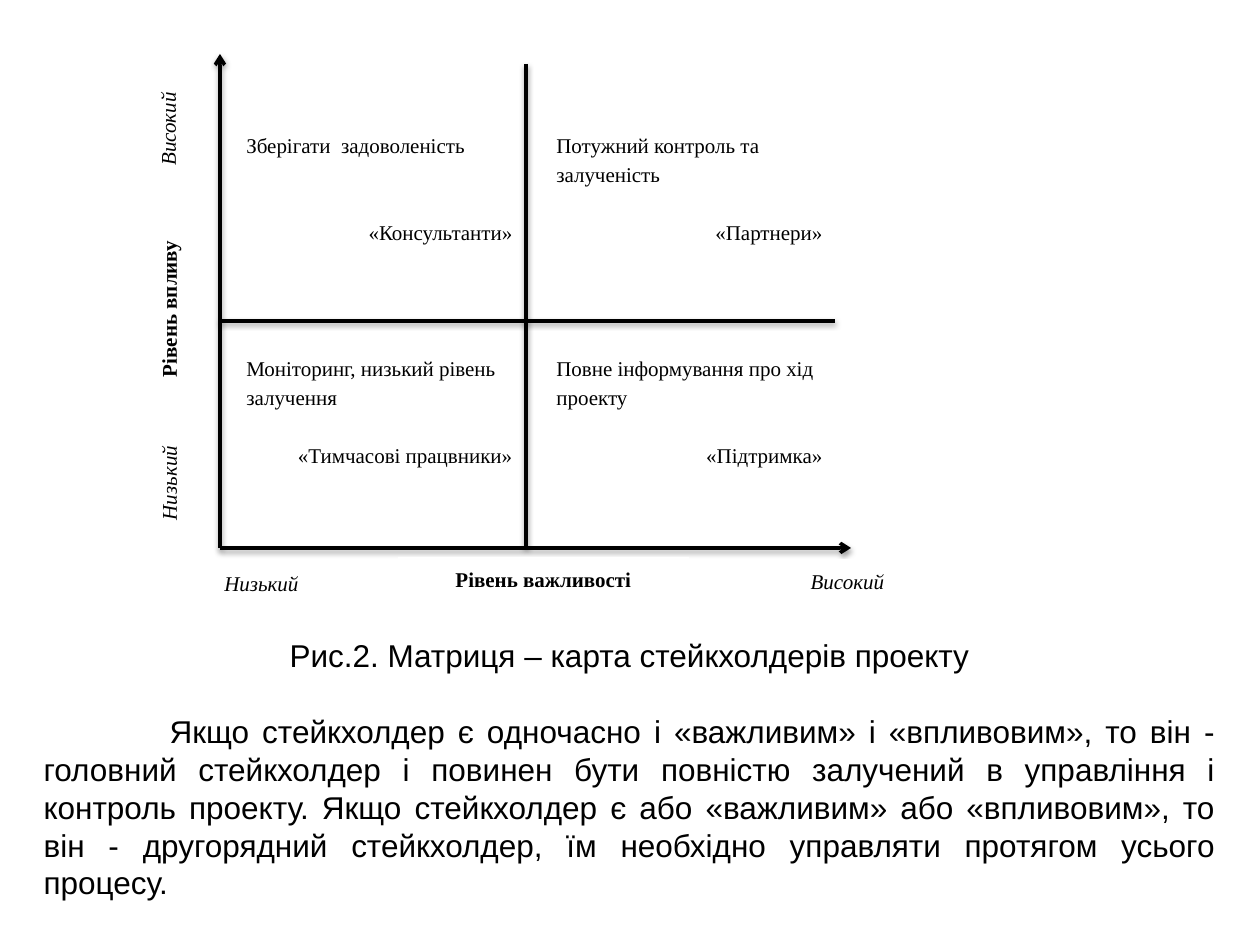
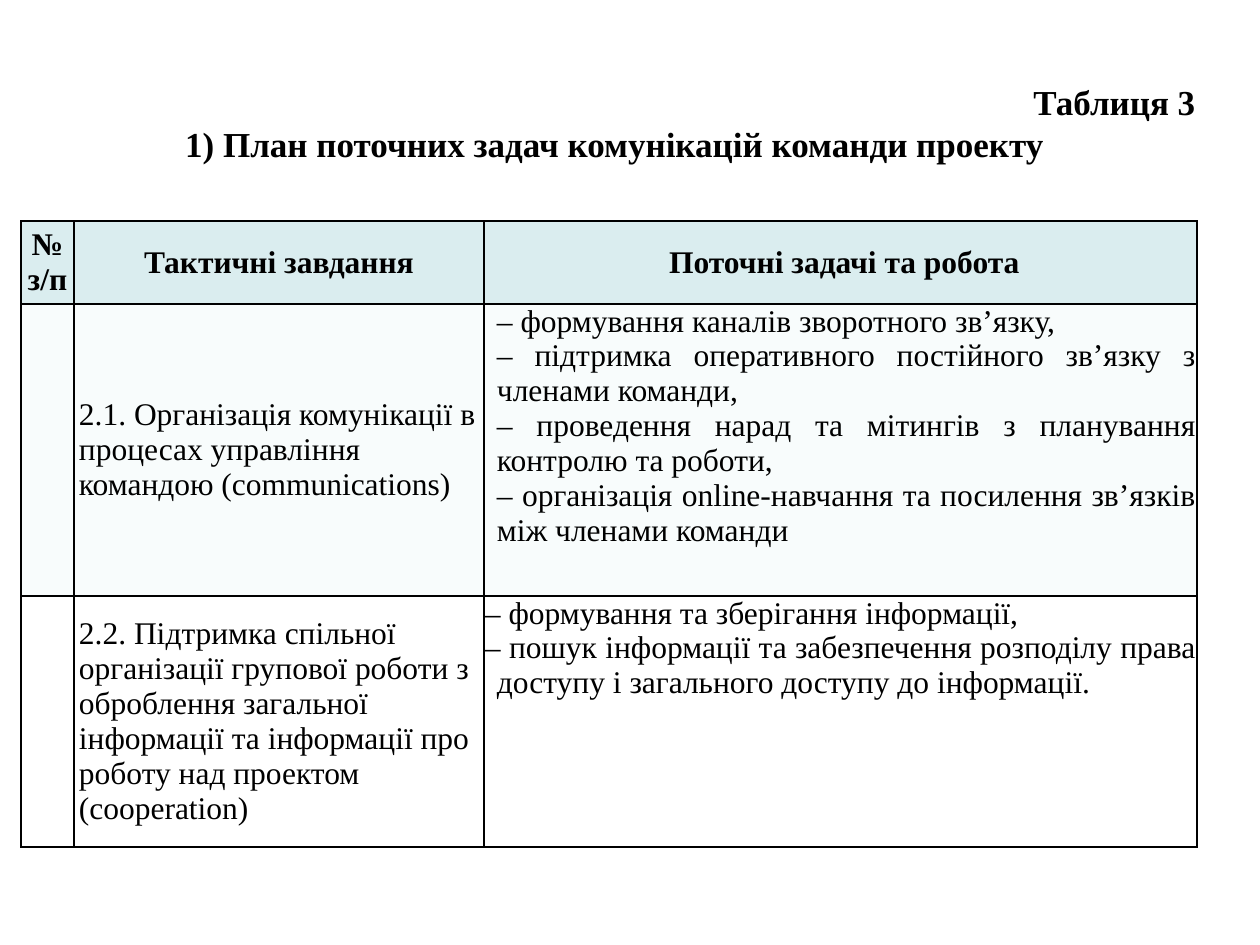
from lxml import etree
from pptx import Presentation
from pptx import util as u
from pptx.dml.color import RGBColor
from pptx.enum import shapes, text
from pptx.oxml import ns

INK, PAPER, HEAD, TINT = "000000", "FFFFFF", "DAEDEF", "F8FCFC"
SANS, SERIF = "Arial", "Times New Roman"
LEFT, CENTER, RIGHT, JUSTIFY = (
    text.PP_ALIGN.LEFT, text.PP_ALIGN.CENTER, text.PP_ALIGN.RIGHT, text.PP_ALIGN.JUSTIFY)
TOP, MIDDLE = text.MSO_ANCHOR.TOP, text.MSO_ANCHOR.MIDDLE

QUADRANTS = [
    ("Зберігати  задоволеність", "«Консультанти»", 2),
    ("Потужний контроль та залученість", "«Партнери»", 1),
    ("Моніторинг, низький рівень залучення", "«Тимчасові працвники»", 1),
    ("Повне інформування про хід проекту", "«Підтримка»", 1),
]
CAPTION = "Рис.2. Матриця – карта стейкхолдерів проекту"
CONCLUSION = (
    "Якщо стейкхолдер є одночасно і «важливим» і «впливовим», то він - головний "
    "стейкхолдер і повинен бути повністю залучений в управління і контроль проекту. "
    "Якщо стейкхолдер є або «важливим» або «впливовим», то він - другорядний "
    "стейкхолдер, їм необхідно управляти протягом усього процесу.")
HEADERS = ["№ з/п", "Тактичні завдання", "Поточні задачі та робота"]
TASKS = [
    ("2.1. Організація комунікації в процесах управління командою (communications)",
     ["– формування каналів зворотного зв’язку,",
      "– підтримка оперативного постійного зв’язку з членами команди,",
      "– проведення нарад та мітингів з планування контролю та роботи,",
      "– організація online-навчання та посилення зв’язків між членами команди"],
     TINT, 0),
    ("2.2. Підтримка спільної організації групової роботи з оброблення загальної "
     "інформації та інформації про роботу над проектом (cooperation)",
     ["– формування та зберігання інформації,",
      "– пошук інформації та забезпечення розподілу права доступу і загального "
      "доступу до інформації."],
     PAPER, -12),
]


def px(n):
    """Turn px into EMU."""
    return u.Emu(round(n * 914400 / 126))


def rgb(hex_color):
    """Turn a hex string into a colour."""
    return RGBColor.from_string(hex_color)


def paint(item, hex_color):
    """Give a shape or cell a solid fill."""
    item.fill.solid()
    item.fill.fore_color.rgb = rgb(hex_color)


def sub(parent, tag, **attrs):
    """Append a drawing element with attributes."""
    el = etree.SubElement(parent, ns.qn(tag))
    for name, value in attrs.items():
        el.set(name, str(value))
    return el


def write(tf, index, words, size, font, align=LEFT, bold=False, italic=False,
          spacing=1.0, before=0, margin=0, indent=0):
    """Write one formatted paragraph, adding it if it is not the first."""
    p = tf.add_paragraph() if index else tf.paragraphs[0]
    p.alignment, p.line_spacing = align, spacing
    p.space_before, p.space_after = u.Pt(before), u.Pt(0)
    pPr = p._p.get_or_add_pPr()
    pPr.set("marL", str(px(margin)))
    pPr.set("indent", str(px(indent)))
    sub(pPr, "a:buNone")
    r = p.add_run()
    r.text = words
    f = r.font
    f.name, f.size, f.bold, f.italic = font, u.Pt(size), bold, italic
    f.color.rgb = rgb(INK)


def placed(sp, x, y, w, h):
    """Move a placeholder and return its prepared text frame."""
    sp.left, sp.top, sp.width, sp.height = map(px, (x, y, w, h))
    tf = sp.text_frame
    tf.word_wrap, tf.auto_size = True, text.MSO_AUTO_SIZE.NONE
    tf.vertical_anchor = TOP
    return tf


def panel(s, x, y, w, h, vertical=False):
    """Add a white rectangle and return its text frame."""
    sp = s.shapes.add_shape(shapes.MSO_SHAPE.RECTANGLE, *map(px, (x, y, w, h)))
    sp.shadow.inherit = False
    paint(sp, PAPER)
    sp.line.fill.background()
    tf = sp.text_frame
    tf.word_wrap, tf.vertical_anchor = True, TOP
    if vertical:
        tf._txBody.bodyPr.set("vert", "vert270")
    return tf


def rule(s, x1, y1, x2, y2, arrow=False):
    """Draw a shadowed line, with an arrowhead for an axis."""
    cx = s.shapes.add_connector(shapes.MSO_CONNECTOR.STRAIGHT, *map(px, (x1, y1, x2, y2)))
    cx.line.color.rgb, cx.line.width = rgb(INK), u.Pt(2)
    if arrow:
        sub(cx.line._get_or_add_ln(), "a:tailEnd", type="arrow")
    shadow = sub(sub(cx._element.spPr, "a:effectLst"), "a:outerShdw",
                 blurRad=u.Pt(3.1), dist=u.Pt(1.6), dir=5400000, rotWithShape=0)
    sub(sub(shadow, "a:srgbClr", val=INK), "a:alpha", val=38000)


def matrix(s, x, y, w, h):
    """Draw the influence and importance matrix in the given box."""
    mid_x, mid_y, bottom = x + 306, y + 267, y + h
    for i, (action, role, gap) in enumerate(QUADRANTS):
        row, col = divmod(i, 2)
        tf = panel(s, x + 14 + 310 * col, y + 69 + 223 * row, 291, 179)
        write(tf, 0, action, 12, SERIF, spacing=1.15)
        write(tf, 1, role, 12, SERIF, RIGHT, spacing=1.15, before=16.6 * gap)
    rule(s, x, bottom, x + w, bottom, arrow=True)
    rule(s, x, bottom, x, y, arrow=True)
    rule(s, x, mid_y, x + w - 16, mid_y)
    rule(s, mid_x, y + 10, mid_x, bottom)
    labels = [
        ("Рівень важливості", 178, 503, 291, 49, False),
        ("Низький", -104, 507, 291, 49, False),
        ("Високий", 482, 505, 291, 49, False),
        ("Низький", -74, 350, 66, 158, True),
        ("Рівень впливу", -74, 151, 66, 208, True),
        ("Високий", -75, -4, 66, 158, True),
    ]
    for words, dx, dy, lw, lh, vertical in labels:
        axis = words.startswith("Рівень")
        write(panel(s, x + dx, y + dy, lw, lh, vertical), 0, words, 12, SERIF, CENTER,
              bold=axis, italic=not axis, spacing=1.15)


def matrix_slide(prs):
    """Build the slide with the stakeholder matrix and its conclusion."""
    s = prs.slides.add_slide(prs.slide_layouts[1])
    write(placed(s.shapes.title, 31, 630, 1197, 50), 0, CAPTION, 18, SANS, CENTER)
    body = placed(s.placeholders[1], 31, 706, 1197, 204)
    write(body, 0, CONCLUSION, 18, SANS, JUSTIFY, indent=126)
    matrix(s, 220, 54, 631, 494)


def style_cell(cell, fill, anchor):
    """Set fill, insets and borders of a cell and return its text frame."""
    cell.margin_left = cell.margin_right = px(1)
    cell.margin_top = cell.margin_bottom = px(0)
    cell.vertical_anchor = anchor
    tcPr = cell._tc.get_or_add_tcPr()
    for side in ("a:lnL", "a:lnR", "a:lnT", "a:lnB"):
        ln = sub(tcPr, side, w=u.Pt(1))
        sub(sub(ln, "a:solidFill"), "a:srgbClr", val=INK)
    paint(cell, fill)
    return cell.text_frame


def task_table(s, x, y, widths, heights):
    """Draw the table of tactical and current tasks."""
    table = s.shapes.add_table(len(heights), len(widths), px(x), px(y),
                               px(sum(widths)), px(sum(heights))).table
    for col, w in zip(table.columns, widths):
        col.width = px(w)
    for row, h in zip(table.rows, heights):
        row.height = px(h)
    for c, words in enumerate(HEADERS):
        write(style_cell(table.cell(0, c), HEAD, MIDDLE), 0, words, 18, SERIF, CENTER,
              bold=True, margin=8 if c == 2 else 0)
    for r, (goal, jobs, fill, indent) in enumerate(TASKS, 1):
        style_cell(table.cell(r, 0), fill, TOP)
        write(style_cell(table.cell(r, 1), fill, MIDDLE), 0, goal, 18, SERIF, margin=4)
        tf = style_cell(table.cell(r, 2), fill, TOP)
        for i, job in enumerate(jobs):
            write(tf, i, job, 18, SERIF, JUSTIFY, margin=12, indent=indent)


def table_slide(prs):
    """Build the slide with the communication plan."""
    s = prs.slides.add_slide(prs.slide_layouts[5])
    tf = placed(s.shapes.title, 21, 73, 1187, 136)
    paint(s.shapes.title, PAPER)
    tf.margin_top = px(7)
    write(tf, 0, "Таблиця 3", 20, SERIF, RIGHT, bold=True)
    write(tf, 1, "1) План поточних задач комунікацій команди проекту", 20, SERIF,
          CENTER, bold=True)
    task_table(s, 21, 221, (53, 410, 713), (83, 292, 251))


def main():
    """Build and save the presentation."""
    prs = Presentation()
    prs.slide_width, prs.slide_height = px(1260), px(945)
    matrix_slide(prs)
    table_slide(prs)
    prs.save("out.pptx")


if __name__ == "__main__":
    main()
